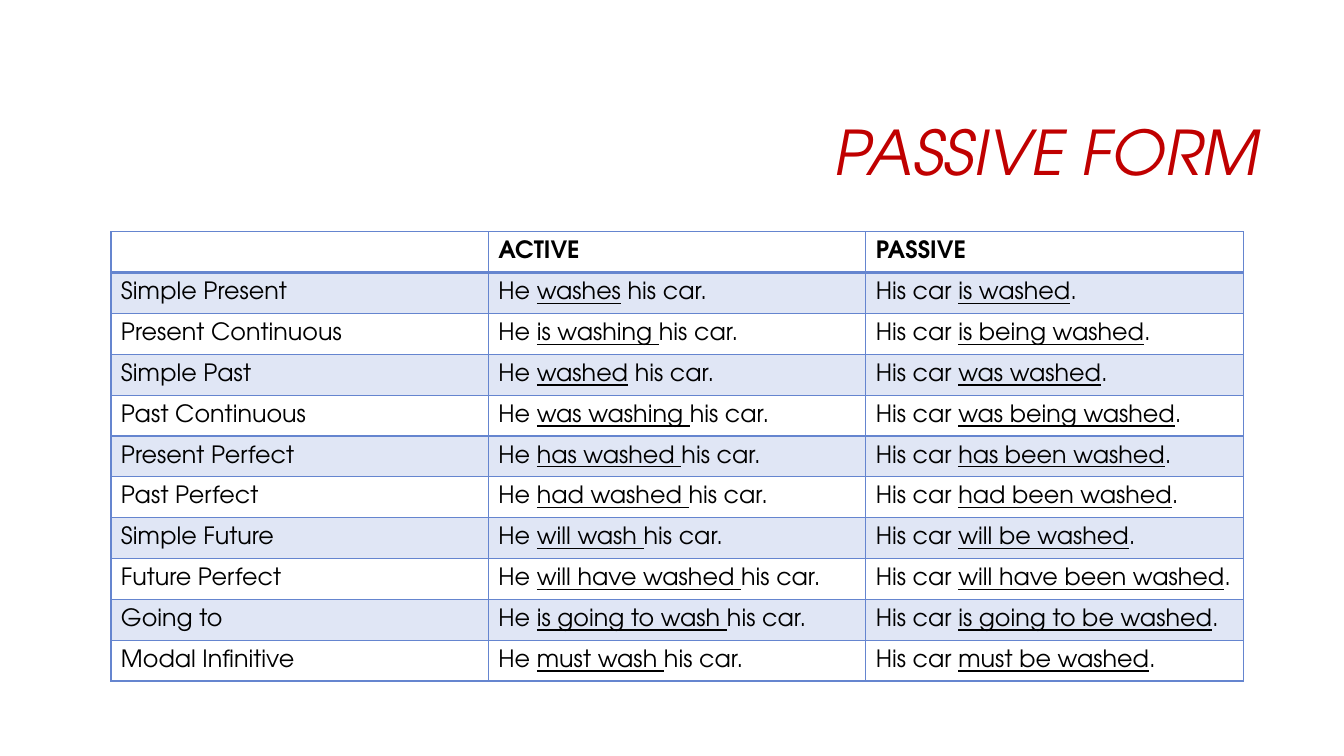
"""Build a slide with a table of active and passive verb forms."""
import pptx
import pptx.dml.color
import pptx.enum.text
import pptx.oxml
import pptx.oxml.ns
import pptx.util

COLOURS = {"title": "C00000", "text": "000000", "grid": "6585CF"}
FONT = "TeX Gyre Adventor"
HEADINGS = ["", "ACTIVE", "PASSIVE"]
TENSES = [
    ("Simple Present", "washes", " his car.", "is washed"),
    ("Present Continuous", "is washing ", "his car.", "is being washed"),
    ("Simple Past", "washed", " his car.", "was washed"),
    ("Past Continuous", "was washing ", "his car.", "was being washed"),
    ("Present Perfect", "has washed ", "his car.", "has been washed"),
    ("Past Perfect", "had washed ", "his car.", "had been washed"),
    ("Simple Future", "will wash ", "his car.", "will be washed"),
    ("Future Perfect", "will have washed ", "his car.", "will have been washed"),
    ("Going to", "is going to wash ", "his car.", "is going to be washed"),
    ("Modal Infinitive", "must wash ", "his car.", "must be washed"),
]


def style_font(font, size, colour):
    font.name = FONT
    font.size = pptx.util.Pt(size)
    font.color.rgb = pptx.dml.color.RGBColor.from_string(COLOURS[colour])


def add_borders(cell, widths):
    properties = cell._tc.get_or_add_tcPr()
    for position, (side, width) in enumerate(widths.items()):
        border = pptx.oxml.parse_xml(
            f'<a:ln{side} {pptx.oxml.ns.nsdecls("a")} w="{pptx.util.Pt(width)}">'
            f'<a:solidFill><a:srgbClr val="{COLOURS["grid"]}"/></a:solidFill></a:ln{side}>'
        )
        properties.insert(position, border)


deck = pptx.Presentation()
deck.slide_width = pptx.util.Inches(13.33)
deck.slide_height = pptx.util.Inches(7.5)
page = deck.slides.add_slide(deck.slide_layouts[6])

title_place = [pptx.util.Inches(length) for length in (3.17, 0.84, 9.42, 1.41)]
title = page.shapes.add_textbox(*title_place)
title.text_frame.word_wrap = True
title.text_frame.vertical_anchor = pptx.enum.text.MSO_ANCHOR.MIDDLE
title.text_frame.text = "PASSIVE FORM"
para = title.text_frame.paragraphs[0]
para.alignment = pptx.enum.text.PP_ALIGN.RIGHT
para.line_spacing = 0.9
style_font(para.runs[0].font, 44, "title")
para.runs[0].font.italic = True

rows = [[[heading] for heading in HEADINGS]]
for tense, active, ending, passive in TENSES:
    rows.append([[tense], ["He ", active, ending], ["His car ", passive, "."]])

table_place = [pptx.util.Inches(length) for length in (1.1, 2.3, 11.23, 4.46)]
table = page.shapes.add_table(len(rows), len(HEADINGS), *table_place).table

for row_number, row in enumerate(rows):
    for column_number, pieces in enumerate(row):
        cell = table.cell(row_number, column_number)
        cell.vertical_anchor = pptx.enum.text.MSO_ANCHOR.MIDDLE
        para = cell.text_frame.paragraphs[0]
        style_font(para.font, 17, "text")
        for piece_number, piece in enumerate(pieces):
            if piece:
                span = para.add_run()
                span.text = piece
                style_font(span.font, 17, "text")
                span.font.bold = row_number == 0
                span.font.underline = piece_number == 1
        if row_number % 2:
            cell.fill.solid()
            cell.fill.fore_color.rgb = pptx.dml.color.RGBColor.from_string(COLOURS["grid"])
            tint = cell._tc.tcPr.find(".//" + pptx.oxml.ns.qn("a:srgbClr"))
            tint.append(pptx.oxml.parse_xml(f'<a:alpha {pptx.oxml.ns.nsdecls("a")} val="20000"/>'))
        else:
            cell.fill.background()
        top = 2 if row_number == 1 else 1
        bottom = 2 if row_number == 0 else 1
        add_borders(cell, {"L": 1, "R": 1, "T": top, "B": bottom})

deck.save("out.pptx")
